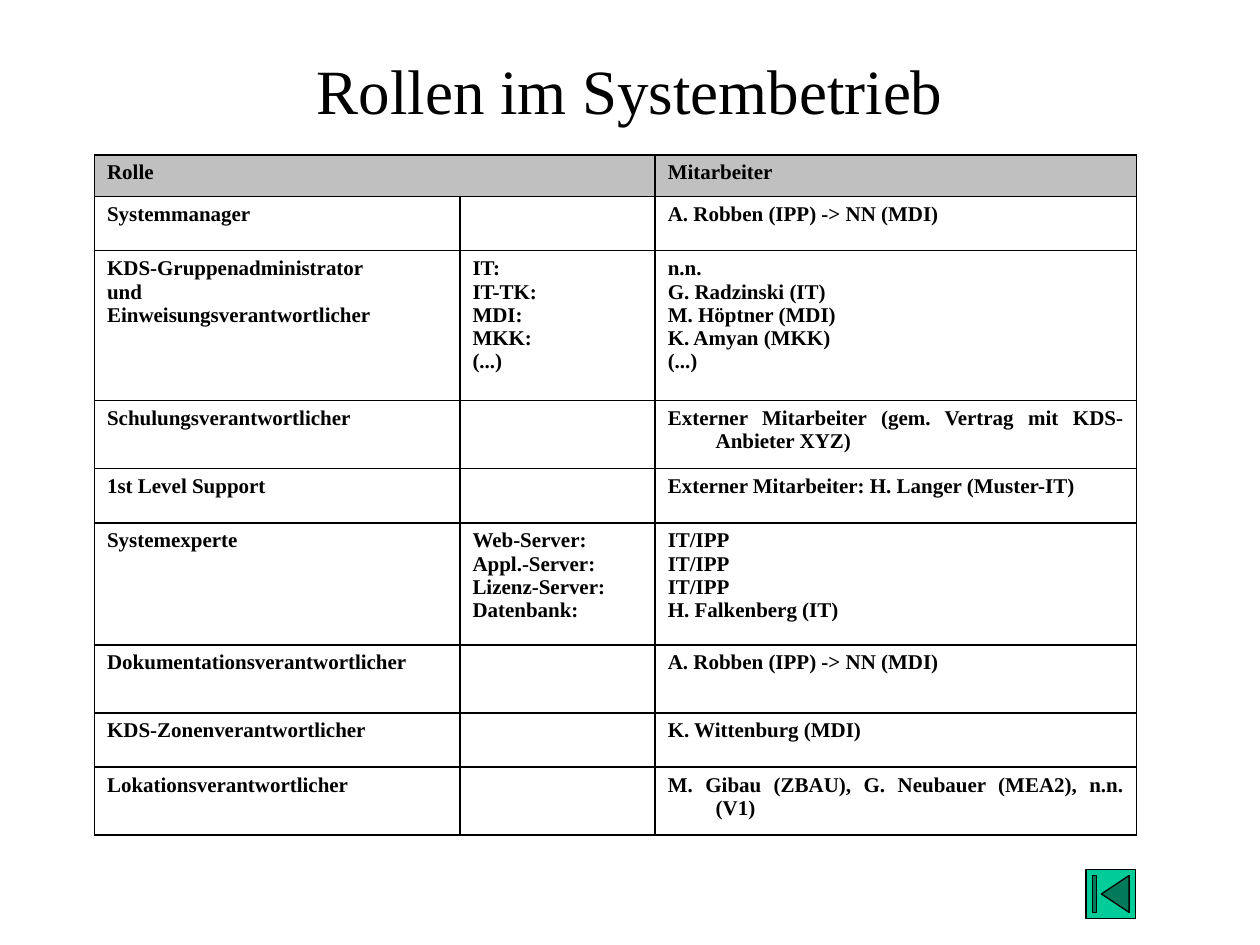
from typing import NamedTuple

from pptx import Presentation
from pptx import util as u
from pptx.dml.color import RGBColor
from pptx.enum import shapes, text
from pptx.oxml import parse_xml
from pptx.oxml.ns import nsdecls

BLACK = RGBColor(0x00, 0x00, 0x00)
WHITE = RGBColor(0xFF, 0xFF, 0xFF)
GRAY = RGBColor(0xC0, 0xC0, 0xC0)
GREEN = RGBColor(0x00, 0xCC, 0x99)

TITLE_FONT = {"name": "Times New Roman", "size": u.Pt(36)}
CELL_FONT = {"name": "Times New Roman", "size": u.Pt(12), "bold": True}
HANGING = u.Inches(0.38)
COLUMN_WIDTHS = (2.9, 1.55, 3.82)


class Role(NamedTuple):
    height: float
    name: str
    areas: str
    staff: str


ROLES = [
    Role(0.33, "Rolle", "", "Mitarbeiter"),
    Role(0.43, "Systemmanager", "", "A. Robben (IPP) -> NN (MDI)"),
    Role(1.19, "KDS-Gruppenadministrator\nund\nEinweisungsverantwortlicher",
         "IT:\nIT-TK:\nMDI:\nMKK:\n(...)",
         "n.n.\nG. Radzinski (IT)\nM. Höptner (MDI)\nK. Amyan (MKK)\n(...)"),
    Role(0.54, "Schulungsverantwortlicher", "",
         "Externer Mitarbeiter (gem. Vertrag mit KDS-Anbieter XYZ)"),
    Role(0.43, "1st Level Support", "", "Externer Mitarbeiter: H. Langer (Muster-IT)"),
    Role(0.97, "Systemexperte",
         "Web-Server:\nAppl.-Server:\nLizenz-Server:\nDatenbank:",
         "IT/IPP\nIT/IPP\nIT/IPP\nH. Falkenberg (IT)"),
    Role(0.54, "Dokumentationsverantwortlicher", "", "A. Robben (IPP) -> NN (MDI)"),
    Role(0.43, "KDS-Zonenverantwortlicher", "", "K. Wittenburg (MDI)"),
    Role(0.54, "Lokationsverantwortlicher", "",
         "M. Gibau (ZBAU), G. Neubauer (MEA2), n.n. (V1)"),
]


def set_font(font, formats: dict) -> None:
    for name, value in formats.items():
        setattr(font, name, value)
    font.color.rgb = BLACK


def add_borders(cell) -> None:
    """Put a 1 pt black line on all four sides, ahead of the cell fill."""
    tc_pr = cell._tc.get_or_add_tcPr()
    for i, side in enumerate(("lnL", "lnR", "lnT", "lnB")):
        tc_pr.insert(i, parse_xml(
            f'<a:{side} {nsdecls("a")} w="{u.Pt(1)}"><a:solidFill>'
            f'<a:srgbClr val="{BLACK}"/></a:solidFill></a:{side}>'))


def fill_cell(cell, content: str, color: RGBColor) -> None:
    cell.fill.solid()
    cell.fill.fore_color.rgb = color
    add_borders(cell)
    tf = cell.text_frame
    tf.text = content
    for p in tf.paragraphs:
        p.alignment = text.PP_ALIGN.JUSTIFY
        p_pr = p._p.get_or_add_pPr()
        p_pr.set("marL", str(HANGING))
        p_pr.set("indent", str(-HANGING))
        set_font(p.font, CELL_FONT)
        for r in p.runs:
            set_font(r.font, CELL_FONT)


def add_title(s, title: str) -> None:
    box = s.shapes.add_textbox(u.Inches(0.75), u.Inches(0.17), u.Inches(8.5), u.Inches(1.08))
    tf = box.text_frame
    tf.word_wrap = True
    tf.vertical_anchor = text.MSO_ANCHOR.MIDDLE
    p = tf.paragraphs[0]
    p.alignment = text.PP_ALIGN.CENTER
    r = p.add_run()
    r.text = title
    set_font(r.font, TITLE_FONT)


def add_role_table(s, roles: list[Role]) -> None:
    table = s.shapes.add_table(
        len(roles), len(COLUMN_WIDTHS), u.Inches(0.75), u.Inches(1.23),
        u.Inches(sum(COLUMN_WIDTHS)), u.Inches(sum(role.height for role in roles))).table
    for column, width in zip(table.columns, COLUMN_WIDTHS):
        column.width = u.Inches(width)
    for i, role in enumerate(roles):
        table.rows[i].height = u.Inches(role.height)
        for j, content in enumerate((role.name, role.areas, role.staff)):
            fill_cell(table.cell(i, j), content, WHITE if i else GRAY)
    table.cell(0, 0).merge(table.cell(0, 1))


def add_start_button(s) -> None:
    sp = s.shapes.add_shape(shapes.MSO_SHAPE.ACTION_BUTTON_BEGINNING,
                            u.Inches(8.62), u.Inches(6.9), u.Inches(0.39), u.Inches(0.39))
    sp.shadow.inherit = False
    sp.fill.solid()
    sp.fill.fore_color.rgb = GREEN
    sp.line.color.rgb = BLACK
    sp.line.width = u.Pt(0.75)


def main() -> None:
    prs = Presentation()
    prs.slide_width, prs.slide_height = u.Inches(10), u.Inches(7.5)
    s = prs.slides.add_slide(prs.slide_layouts[6])
    add_title(s, "Rollen im Systembetrieb")
    add_role_table(s, ROLES)
    add_start_button(s)
    prs.save("out.pptx")


if __name__ == "__main__":
    main()
